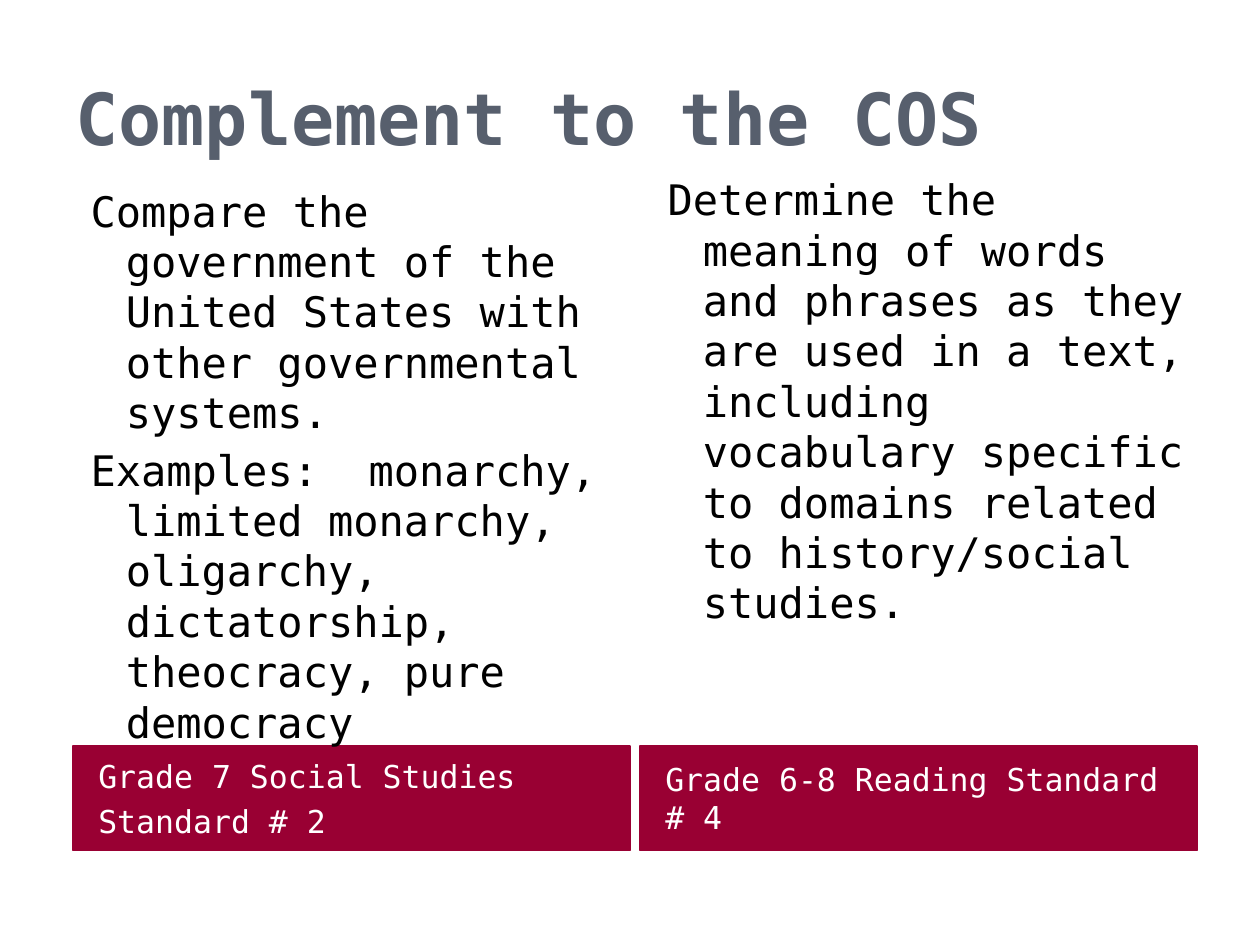
from pptx import Presentation
from pptx.dml.color import RGBColor
from pptx.enum.shapes import MSO_SHAPE
from pptx.enum.text import MSO_ANCHOR, PP_ALIGN
from pptx.util import Inches, Pt

RECT = MSO_SHAPE.RECTANGLE
TOP, MIDDLE = MSO_ANCHOR.TOP, MSO_ANCHOR.MIDDLE
LEFT = PP_ALIGN.LEFT


def rgb(value):
    return RGBColor.from_string(value)


class Deck:
    font = "DejaVu Sans Mono"
    slate, crimson, white, black = "575F6D", "990033", "FFFFFF", "000000"

    def __init__(self):
        self.prs = Presentation()
        self.prs.slide_width, self.prs.slide_height = Inches(10), Inches(7.5)
        self.s = self.prs.slides.add_slide(self.prs.slide_layouts[6])

    def set_text(self, sp, lines, size, color, anchor, bold=False, hanging=False):
        tf = sp.text_frame
        tf.word_wrap = True
        tf.vertical_anchor = anchor
        for i, line in enumerate(lines):
            p = tf.add_paragraph() if i else tf.paragraphs[0]
            p.text = line
            p.alignment = LEFT
            if i:
                p.space_before = Pt(4)
            if hanging:
                pPr = p._p.get_or_add_pPr()
                pPr.set("marL", str(Inches(0.4)))
                pPr.set("indent", str(Inches(-0.28)))
            p.font.name = self.font
            p.font.size = Pt(size)
            p.font.bold = bold
            p.font.color.rgb = rgb(color)

    def textbox(self, x, y, w, h):
        return self.s.shapes.add_textbox(Inches(x), Inches(y), Inches(w), Inches(h))

    def title(self, text):
        sp = self.textbox(0.5, 0.3, 9, 1.25)
        self.set_text(sp, [text], 41, self.slate, MIDDLE, bold=True)

    def body(self, x, y, h, lines):
        sp = self.textbox(x, y, 4.42, h)
        self.set_text(sp, lines, 24, self.black, TOP, hanging=True)

    def banner(self, x, lines):
        sp = self.s.shapes.add_shape(RECT, Inches(x), Inches(5.92), Inches(4.42), Inches(0.83))
        sp.shadow.inherit = False
        sp.fill.solid()
        sp.fill.fore_color.rgb = rgb(self.crimson)
        sp.line.color.rgb = rgb(self.crimson)
        sp.line.width = Pt(0.75)
        sp.text_frame.margin_left = Inches(0.2)
        self.set_text(sp, lines, 18, self.white, MIDDLE)


def main():
    deck = Deck()
    deck.title("Complement to the COS")
    deck.banner(0.58, ["Grade 7 Social Studies", "Standard # 2"])
    deck.banner(5.08, ["Grade 6-8 Reading Standard # 4"])
    deck.body(0.5, 1.42, 4.31, [
        "Compare the government of the United States with other governmental systems.",
        "Examples:  monarchy, limited monarchy, oligarchy, dictatorship, theocracy, "
        "pure democracy",
    ])
    deck.body(5.08, 1.33, 4.56, [
        "Determine the meaning of words and phrases as they are used in a text, "
        "including vocabulary specific to domains related to history/social studies.",
    ])
    deck.prs.save("out.pptx")


if __name__ == "__main__":
    main()
